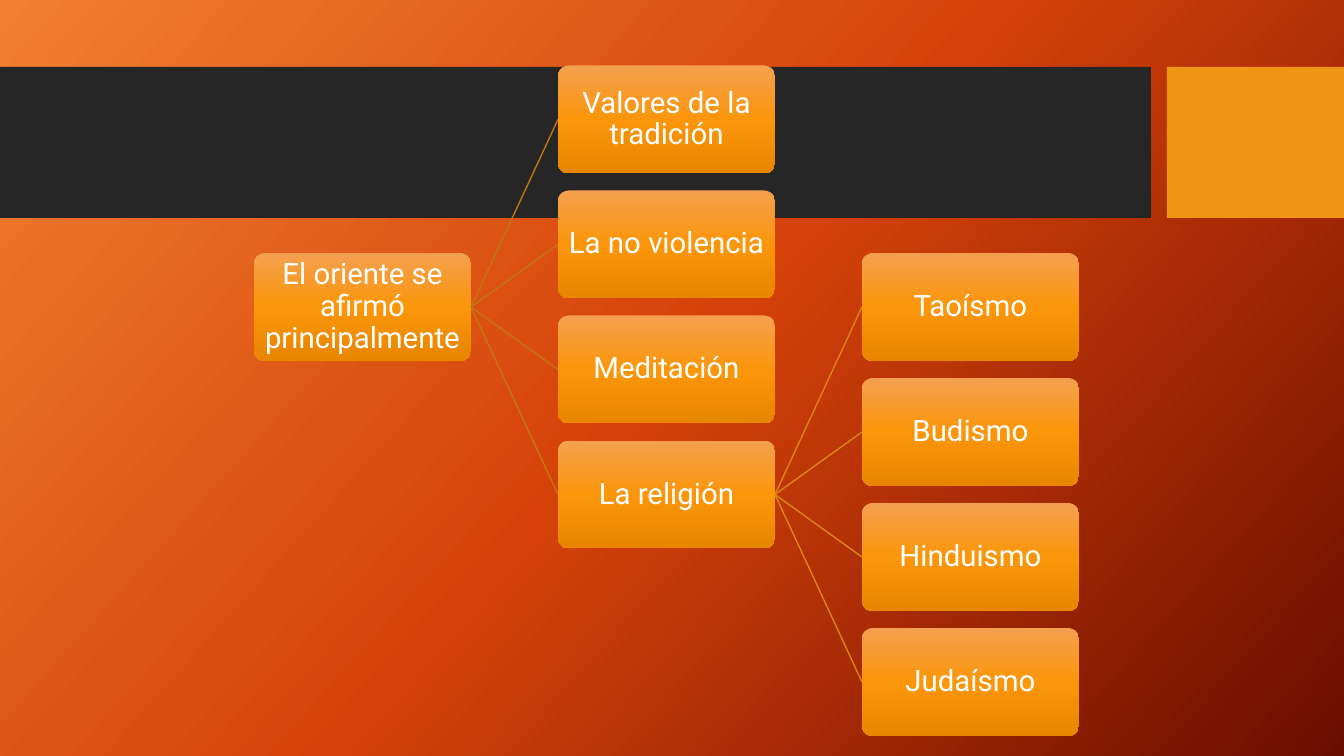
import copy

import lxml.etree
import pptx
import pptx.dml.color
import pptx.enum.shapes
import pptx.enum.text
import pptx.oxml.ns
import pptx.util

PX = 914400 / 100.8  # EMU in one px
COLORS = {
    "band": "262626",
    "accent": "F09415",
    "text": "FFFFFF",
    "link1": "C07711",
    "link2": "DA8613",
}
BACKGROUND = ("F18031", "D54209", "6A0D00")
NODE = ("F4A050", "FB960A", "E88600")

NODE_W, NODE_H = 217, 108
COLUMN_STEP, ROW_STEP = 304, 125

TREE = ("El oriente se afirmó principalmente", [
    ("Valores de la tradición", []),
    ("La no violencia", []),
    ("Meditación", []),
    ("La religión", [
        ("Taoísmo", []),
        ("Budismo", []),
        ("Hinduismo", []),
        ("Judaísmo", []),
    ]),
])


def emu(*lengths):
    return [pptx.util.Emu(round(n * PX)) for n in lengths]


def rgb(value):
    return pptx.dml.color.RGBColor.from_string(value)


def set_gradient(fill, element, colors, angle):
    """Spread three colours evenly; angle runs clockwise."""
    fill.gradient()
    fill.gradient_angle = 360 - angle
    stops = next(element.iter(pptx.oxml.ns.qn("a:gsLst")))
    stops.append(copy.deepcopy(stops[0]))
    for i, (stop, color) in enumerate(zip(fill.gradient_stops, colors)):
        stop.position = i / 2
        stop.color.rgb = rgb(color)


def add_box(s, kind, x, y, w, h):
    sp = s.shapes.add_shape(kind, *emu(x, y, w, h))
    sp.shadow.inherit = False
    sp.line.fill.background()
    return sp


def add_text(sp, text, size=21, font="Roboto", color="text", inset=4):
    tf = sp.text_frame
    tf.word_wrap = True
    tf.vertical_anchor = pptx.enum.text.MSO_ANCHOR.MIDDLE
    (tf.margin_left, tf.margin_top,
     tf.margin_right, tf.margin_bottom) = emu(*[inset] * 4)
    p = tf.paragraphs[0]
    p.alignment = pptx.enum.text.PP_ALIGN.CENTER
    p.line_spacing = 0.9
    r = p.add_run()
    r.text = text
    r.font.size = pptx.util.Pt(size)
    r.font.name = font
    r.font.color.rgb = rgb(COLORS[color])


def add_link(s, x1, y1, x2, y2, color):
    line = s.shapes.add_connector(
        pptx.enum.shapes.MSO_CONNECTOR.STRAIGHT, *emu(x1, y1, x2, y2))
    line.line.color.rgb = rgb(COLORS[color])
    line.line.width = pptx.util.Pt(1)
    lxml.etree.SubElement(line._element.spPr,
                          pptx.oxml.ns.qn("a:effectLst"))


def add_band(s, x, y, w, h):
    """Dark title band with the accent block at its right end."""
    accent_w, gap = 177, 16
    parts = [(x, w - accent_w - gap, "band"),
             (x + w - accent_w, accent_w, "accent")]
    for left, width, color in parts:
        sp = add_box(s, pptx.enum.shapes.MSO_SHAPE.RECTANGLE,
                     left, y, width, h)
        sp.fill.solid()
        sp.fill.fore_color.rgb = rgb(COLORS[color])


def add_tree(s, node, x, y, level=1):
    """Node at x, y, with its children centred on it in the next column."""
    text, children = node
    sp = add_box(s, pptx.enum.shapes.MSO_SHAPE.ROUNDED_RECTANGLE,
                 x, y, NODE_W, NODE_H)
    sp.adjustments[0] = 0.1
    set_gradient(sp.fill, sp._element, NODE, 90)
    add_text(sp, text)

    child_x = x + COLUMN_STEP
    first_y = y - (len(children) - 1) * ROW_STEP / 2
    for i, child in enumerate(children):
        child_y = first_y + i * ROW_STEP
        add_link(s, x + NODE_W, y + NODE_H / 2,
                 child_x, child_y + NODE_H / 2, f"link{level}")
        add_tree(s, child, child_x, child_y, level + 1)


def main():
    prs = pptx.Presentation()
    prs.slide_width, prs.slide_height = emu(1344, 756)
    s = prs.slides.add_slide(prs.slide_layouts[6])
    set_gradient(s.background.fill, s._element, BACKGROUND, 42)
    add_band(s, 0, 67, 1344, 151)
    add_tree(s, TREE, 254, 253)
    prs.save("out.pptx")


if __name__ == "__main__":
    main()
